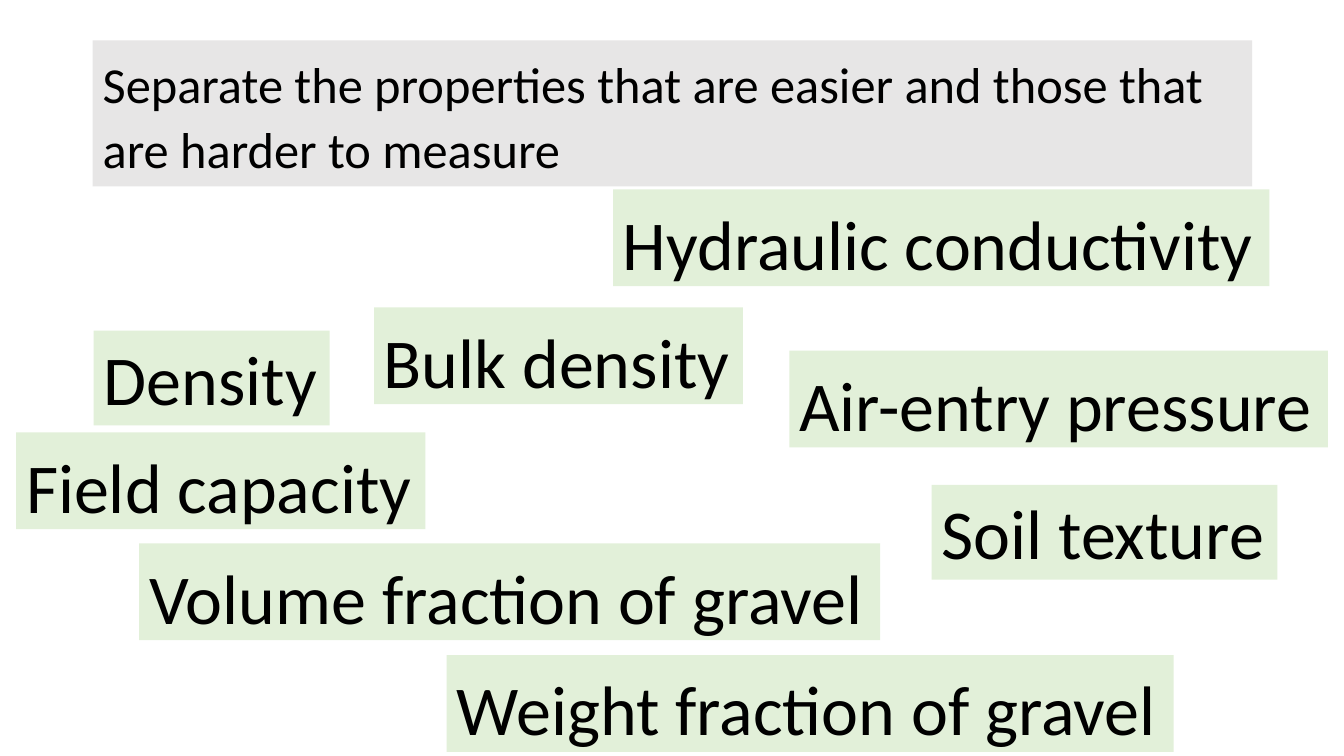
import pptx
import pptx.dml.color
import pptx.enum.text
import pptx.util

Inches = pptx.util.Inches
Anchor = pptx.enum.text.MSO_ANCHOR
AutoSize = pptx.enum.text.MSO_AUTO_SIZE

TASK = "Separate the properties that are easier and those that are harder to measure"
TASK_AREA = (0.92, 0.4, 11.5, 1.45)

# Property, left, top, width
SPACED_PROPERTIES = [
    ("Bulk density", 3.71, 3.05, 3.66),
    ("Weight fraction of gravel", 4.43, 6.5, 7.21),
    ("Field capacity", 0.16, 4.29, 4.06),
    ("Air-entry pressure", 7.83, 3.48, 5.34),
    ("Volume fraction of gravel", 1.38, 5.39, 7.35),
    ("Hydraulic conductivity", 6.08, 1.88, 6.51),
]
SINGLE_PROPERTIES = [
    ("Density", 0.93, 3.28, 2.34),
    ("Soil texture", 9.24, 4.81, 3.43),
]

THEME = {
    "font": "Calibri",
    "ink": "000000",
    "task_fill": "E7E6E6",
    "property_fill": "E2F0D9",
    "task_size": 36,
    "property_size": 50,
}
SPACED = {"line_spacing": 1.07, "space_after": pptx.util.Pt(8)}
SINGLE = {}
SPACED_HEIGHT = 0.96
SINGLE_HEIGHT = 0.94

TASK_FRAME = {
    "word_wrap": True,
    "auto_size": AutoSize.NONE,
    "vertical_anchor": Anchor.MIDDLE,
}
PROPERTY_FRAME = {
    "word_wrap": False,
    "auto_size": AutoSize.SHAPE_TO_FIT_TEXT,
    "vertical_anchor": Anchor.TOP,
}


def apply_format(target, values):
    for name, value in values.items():
        setattr(target, name, value)


def add_label(page, text, area, role, frame_format, para_format):
    """Add a filled text box; role picks its fill and type size from the theme."""
    box = page.shapes.add_textbox(*map(Inches, area))
    box.fill.solid()
    box.fill.fore_color.rgb = pptx.dml.color.RGBColor.from_string(THEME[role + "_fill"])
    apply_format(box.text_frame, frame_format)
    para = box.text_frame.paragraphs[0]
    apply_format(para, para_format)
    span = para.add_run()
    span.text = text
    apply_format(span.font, {
        "name": THEME["font"],
        "size": pptx.util.Pt(THEME[role + "_size"]),
    })
    span.font.color.rgb = pptx.dml.color.RGBColor.from_string(THEME["ink"])


def main():
    deck = pptx.Presentation()
    apply_format(deck, {"slide_width": Inches(13.33), "slide_height": Inches(7.5)})
    page = deck.slides.add_slide(deck.slide_layouts[6])

    add_label(page, TASK, TASK_AREA, "task", TASK_FRAME, SPACED)
    for properties, height, para_format in (
        (SPACED_PROPERTIES, SPACED_HEIGHT, SPACED),
        (SINGLE_PROPERTIES, SINGLE_HEIGHT, SINGLE),
    ):
        for text, left, top, width in properties:
            area = (left, top, width, height)
            add_label(page, text, area, "property", PROPERTY_FRAME, para_format)

    deck.save("out.pptx")


if __name__ == "__main__":
    main()
